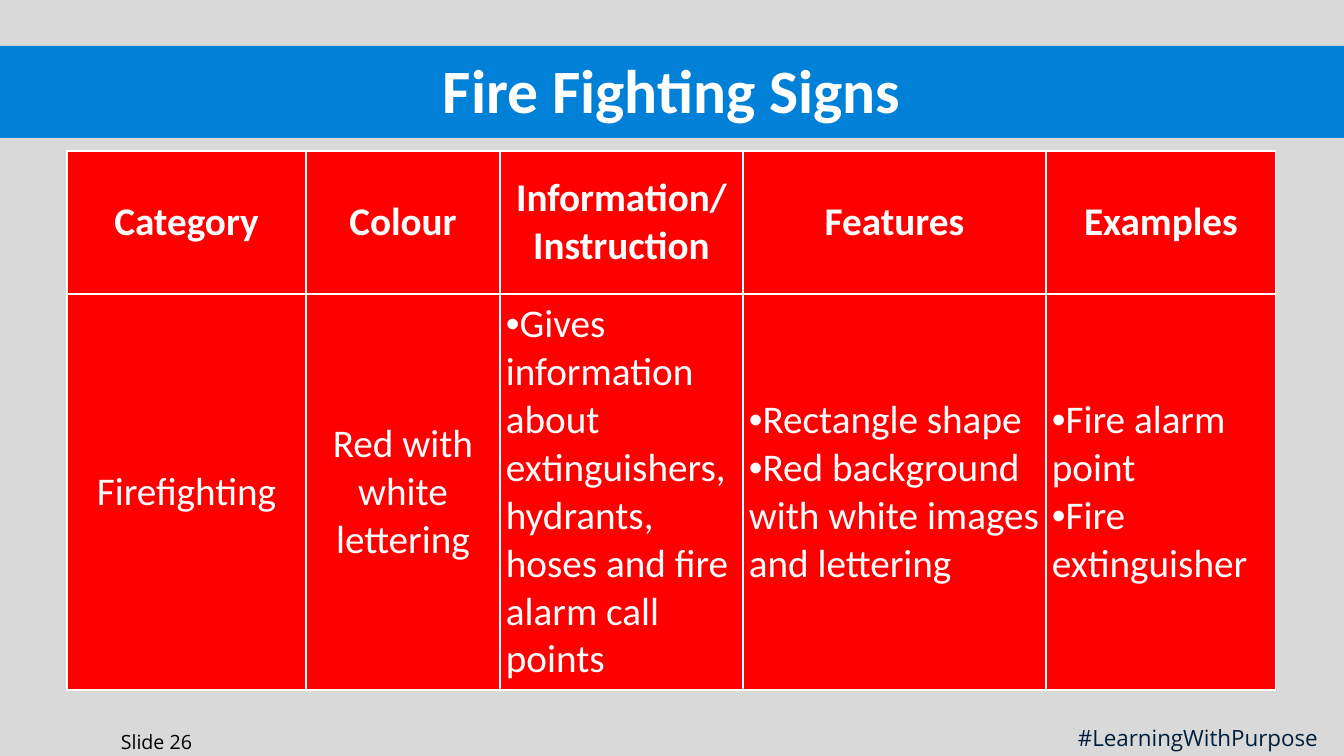
from lxml import etree
from pptx import Presentation
from pptx.dml.color import RGBColor
from pptx.enum.shapes import MSO_SHAPE
from pptx.enum.text import MSO_ANCHOR, PP_ALIGN
from pptx.oxml.ns import qn
from pptx.util import Emu, Pt

PX_PER_INCH = 100.8
WHITE, RED, BLUE, GREY = "FFFFFF", "FF0000", "0080D7", "D9D9D9"
NAVY, BLACK = "001F3C", "000000"


def px(n):
    return Emu(round(n * 914400 / PX_PER_INCH))


def rgb(hex_code):
    return RGBColor.from_string(hex_code)


def set_attrs(target, values):
    for name, value in values.items():
        setattr(target, name, value)


def paint(fill, color):
    fill.solid()
    fill.fore_color.rgb = rgb(color)


def add_bullet(p):
    pPr = p._p.get_or_add_pPr()
    pPr.set("marL", "0")
    pPr.set("indent", "0")
    etree.SubElement(pPr, qn("a:buFont")).set("typeface", "Arial")
    etree.SubElement(pPr, qn("a:buChar")).set("char", "•")


def add_borders(cell, color, width):
    tcPr = cell._tc.get_or_add_tcPr()
    for side in ("lnL", "lnR", "lnT", "lnB"):
        ln = etree.SubElement(tcPr, qn(f"a:{side}"), w=str(Pt(width)))
        fill = etree.SubElement(ln, qn("a:solidFill"))
        etree.SubElement(fill, qn("a:srgbClr")).set("val", color)


class SlideBuilder:
    TITLE = {"name": "Calibri", "size": Pt(44), "bold": True}
    HEADER = {"name": "Calibri", "size": Pt(28), "bold": True}
    CELL = {"name": "Calibri", "size": Pt(28), "bold": False}
    FOOTER = {"name": "Open Sans", "bold": False}
    CELL_BOX = {"vertical_anchor": MSO_ANCHOR.MIDDLE, "margin_left": px(6),
                "margin_right": px(6), "margin_top": px(6), "margin_bottom": px(6)}

    def __init__(self, prs):
        self.s = prs.slides.add_slide(prs.slide_layouts[5])
        paint(self.s.background.fill, GREY)

    def fill_text(self, tf, lines, font, color, align, bullet=False):
        for i, line in enumerate(lines):
            p = tf.add_paragraph() if i else tf.paragraphs[0]
            p.alignment = align
            if bullet:
                add_bullet(p)
            r = p.add_run()
            r.text = line
            set_attrs(r.font, font)
            r.font.color.rgb = rgb(color)

    def band(self, x, y, w, h, color):
        sp = self.s.shapes.add_shape(MSO_SHAPE.RECTANGLE, px(x), px(y), px(w), px(h))
        sp.shadow.inherit = False
        paint(sp.fill, color)
        sp.line.fill.background()
        # The band lies behind the title placeholder
        self.s.shapes._spTree.insert(2, sp._element)

    def title(self, x, y, w, h, text):
        sp = self.s.shapes.title
        set_attrs(sp, {"left": px(x), "top": px(y), "width": px(w), "height": px(h)})
        set_attrs(sp.text_frame, {"vertical_anchor": MSO_ANCHOR.TOP, "margin_top": px(8),
                                  "margin_bottom": 0, "word_wrap": True})
        self.fill_text(sp.text_frame, [text], self.TITLE, WHITE, PP_ALIGN.CENTER)

    def label(self, x, y, w, h, text, size, color, align):
        tf = self.s.shapes.add_textbox(px(x), px(y), px(w), px(h)).text_frame
        tf.word_wrap = False
        self.fill_text(tf, [text], {**self.FOOTER, "size": Pt(size)}, color, align)

    def table(self, x, y, widths, heights, columns):
        """Each column is (header lines, body lines, whether the body is bulleted)."""
        table = self.s.shapes.add_table(len(heights), len(widths), px(x), px(y),
                                        px(sum(widths)), px(sum(heights))).table
        for row, height in zip(table.rows, heights):
            row.height = px(height)
        for c, (width, (header, body, bullet)) in enumerate(zip(widths, columns)):
            table.columns[c].width = px(width)
            self.cell(table.cell(0, c), header, self.HEADER, False)
            self.cell(table.cell(1, c), body, self.CELL, bullet)

    def cell(self, cell, lines, font, bullet):
        set_attrs(cell, self.CELL_BOX)
        add_borders(cell, WHITE, 1)
        paint(cell.fill, RED)
        align = PP_ALIGN.LEFT if bullet else PP_ALIGN.CENTER
        self.fill_text(cell.text_frame, lines, font, WHITE, align, bullet)


COLUMNS = [
    (["Category"], ["Firefighting"], False),
    (["Colour"], ["Red with white lettering"], False),
    (["Information/", "Instruction"],
     ["Gives information about extinguishers, hydrants, hoses and fire alarm call points"],
     True),
    (["Features"],
     ["Rectangle shape", "Red background with white images and lettering"], True),
    (["Examples"], ["Fire alarm point", "Fire extinguisher"], True),
]


def main():
    prs = Presentation()
    prs.slide_width, prs.slide_height = px(1344), px(756)
    slide = SlideBuilder(prs)
    slide.band(0, 46, 1344, 92, BLUE)
    slide.title(251, 44, 842, 72, "Fire Fighting Signs")
    slide.label(1068, 719, 272, 37, "#LearningWithPurpose", 16, NAVY, PP_ALIGN.LEFT)
    slide.label(109, 725, 95, 34, "Slide 26", 14, BLACK, PP_ALIGN.CENTER)
    slide.table(67, 151, [239, 194, 243, 303, 230], [143, 396], COLUMNS)
    prs.save("out.pptx")


if __name__ == "__main__":
    main()
